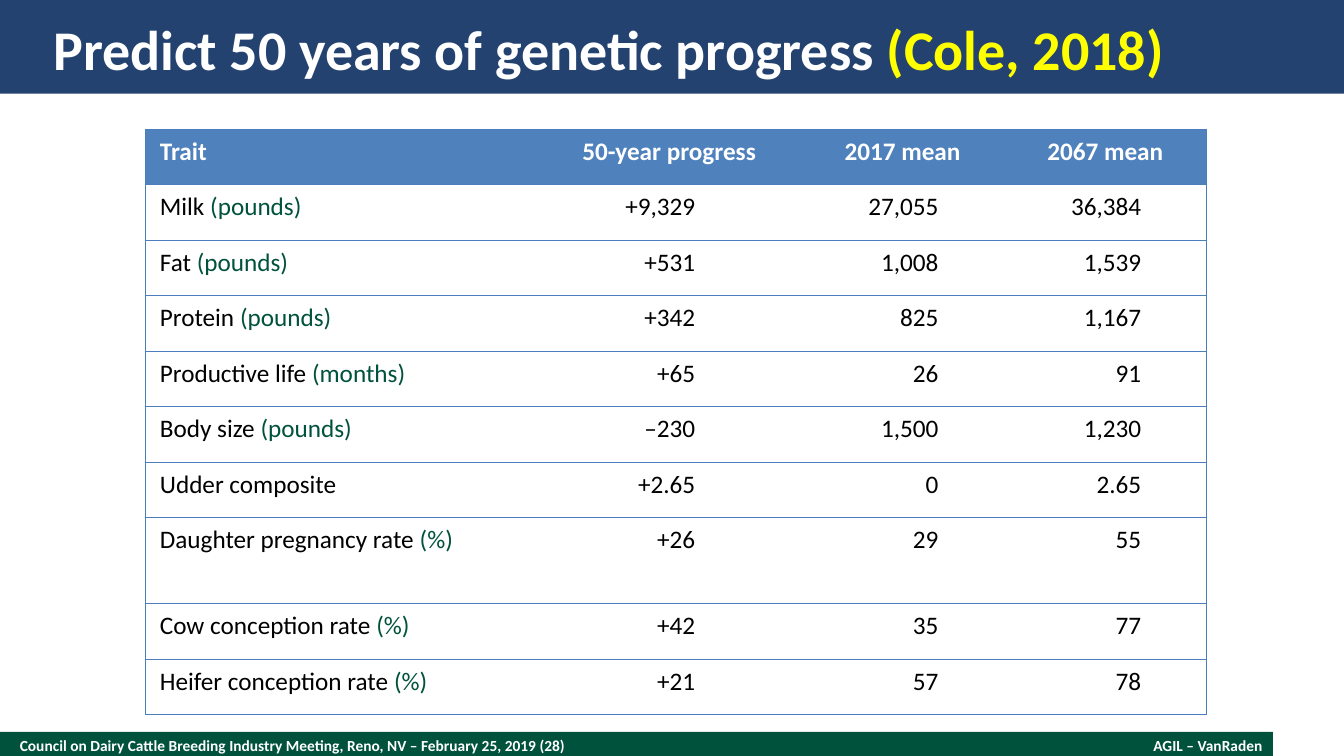
from pptx import Presentation
from pptx.dml.color import RGBColor
from pptx.enum.shapes import MSO_SHAPE
from pptx.enum.text import MSO_ANCHOR, MSO_AUTO_SIZE, PP_ALIGN
from pptx.oxml.ns import qn
from pptx.util import Cm, Pt
from lxml import etree

NAVY = RGBColor(0x24, 0x42, 0x70)
GREEN = RGBColor(0x00, 0x52, 0x3C)
HEADER_BLUE = RGBColor(0x4F, 0x81, 0xBD)
BORDER_BLUE = RGBColor(0x4B, 0x7E, 0xBC)
YELLOW = RGBColor(0xFF, 0xFF, 0x00)
WHITE = RGBColor(0xFF, 0xFF, 0xFF)
BLACK = RGBColor(0x00, 0x00, 0x00)

SLIDE_WIDTH, SLIDE_HEIGHT = 33.87, 19.05
FONT = "Calibri"

HEADINGS = ["Trait", "50-year progress", "2017 mean", "2067 mean"]
# Trait, unit, 50-year progress, 2017 mean, 2067 mean
TRAITS = [
    ("Milk", "(pounds)", "+9,329", "27,055", "36,384"),
    ("Fat", "(pounds)", "+531", "1,008", "1,539"),
    ("Protein", "(pounds)", "+342", "825", "1,167"),
    ("Productive life", "(months)", "+65", "26", "91"),
    ("Body size", "(pounds)", "–230", "1,500", "1,230"),
    ("Udder composite", "", "+2.65", "0", "2.65"),
    ("Daughter pregnancy rate", "(%)", "+26", "29", "55"),
    ("Cow conception rate", "(%)", "+42", "35", "77"),
    ("Heifer conception rate", "(%)", "+21", "57", "78"),
]
COLUMN_WIDTHS = [9.88, 6.65, 5.11, 5.11]
NUMBER_INSETS = [0.37, 2.67, 1.65, 1.65]
ROW_HEIGHT, TALL_ROW_HEIGHT, TALL_ROW = 1.4, 2.17, 7


def add_bar(slide, left, top, width, height, color):
    bar = slide.shapes.add_shape(
        MSO_SHAPE.RECTANGLE, Cm(left), Cm(top), Cm(width), Cm(height))
    bar.shadow.inherit = False
    bar.fill.solid()
    bar.fill.fore_color.rgb = color
    bar.line.fill.background()


def write_line(paragraph, parts, size, bold, align=PP_ALIGN.LEFT):
    """Fill a paragraph with (text, color) parts."""
    paragraph.alignment = align
    paragraph.font.name = FONT
    paragraph.font.size = Pt(size)
    paragraph.font.bold = bold
    for text, color in parts:
        run = paragraph.add_run()
        run.text = text
        run.font.color.rgb = color


def prepare_frame(text_frame):
    text_frame.margin_left = text_frame.margin_right = 0
    text_frame.margin_top = text_frame.margin_bottom = 0
    text_frame.vertical_anchor = MSO_ANCHOR.MIDDLE
    text_frame.auto_size = MSO_AUTO_SIZE.NONE
    text_frame.word_wrap = True
    return text_frame.paragraphs[0]


def add_title(slide, left, top, width, height):
    add_bar(slide, left, top, width, height, NAVY)
    title = slide.shapes.title
    title.left, title.top = Cm(left + 1.35), Cm(top + 0.33)
    title.width, title.height = Cm(width - 2.7), Cm(height - 0.58)
    # Bring the title in front of its bar
    title.element.getparent().append(title.element)
    write_line(prepare_frame(title.text_frame),
               [("Predict 50 years of genetic progress ", WHITE),
                ("(Cole, 2018)", YELLOW)], 40, True)


def add_footer(slide, left, top, width, height):
    add_bar(slide, left, top, width, height, GREEN)
    meeting = ("Council on Dairy Cattle Breeding Industry Meeting, "
               "Reno, NV – February 25, 2019 (28)")
    labels = [
        (meeting, left + 0.5, 22.02, PP_ALIGN.LEFT),
        ("AGIL – VanRaden", left + width - 7.7, 7.44, PP_ALIGN.RIGHT),
    ]
    for text, label_left, label_width, align in labels:
        label = slide.shapes.add_textbox(
            Cm(label_left), Cm(top), Cm(label_width), Cm(height))
        write_line(prepare_frame(label.text_frame),
                   [(text, WHITE)], 11, True, align)


def set_borders(cell, is_first, is_last):
    """Rule the top and bottom of a cell, and the outer sides of the table."""
    properties = cell._tc.get_or_add_tcPr()
    sides = {"lnL": is_first, "lnR": is_last, "lnT": True, "lnB": True}
    for side, visible in sides.items():
        line = etree.SubElement(properties, qn(f"a:{side}"), w=str(Pt(0.75)))
        if visible:
            fill = etree.SubElement(line, qn("a:solidFill"))
            etree.SubElement(fill, qn("a:srgbClr"), val=str(BORDER_BLUE))
        else:
            etree.SubElement(line, qn("a:noFill"))


def fill_cell(cell, parts, column, is_header):
    set_borders(cell, column == 0, column == len(HEADINGS) - 1)
    cell.fill.solid()
    cell.fill.fore_color.rgb = HEADER_BLUE if is_header else WHITE
    cell.margin_left = Cm(0.37)
    cell.margin_right = Cm(0.37 if is_header else NUMBER_INSETS[column])
    cell.margin_top, cell.margin_bottom = Cm(0.18), Cm(0.2)
    if column == 0:
        align = PP_ALIGN.LEFT
    else:
        align = PP_ALIGN.CENTER if is_header else PP_ALIGN.RIGHT
    write_line(cell.text_frame.paragraphs[0], parts, 18, is_header, align)


def add_trait_table(slide, left, top):
    heights = [ROW_HEIGHT] * (len(TRAITS) + 1)
    heights[TALL_ROW] = TALL_ROW_HEIGHT
    table = slide.shapes.add_table(
        len(heights), len(HEADINGS), Cm(left), Cm(top),
        Cm(sum(COLUMN_WIDTHS)), Cm(sum(heights))).table
    table.horz_banding = False
    for column, width in zip(table.columns, COLUMN_WIDTHS):
        column.width = Cm(width)
    for row, height in zip(table.rows, heights):
        row.height = Cm(height)

    # Header row
    for column, heading in enumerate(HEADINGS):
        fill_cell(table.cell(0, column), [(heading, WHITE)], column, True)

    # One row per trait
    for row, (trait, unit, *numbers) in enumerate(TRAITS, start=1):
        name = [(f"{trait} ", BLACK), (unit, GREEN)] if unit else [(trait, BLACK)]
        cells = [name] + [[(number, BLACK)] for number in numbers]
        for column, parts in enumerate(cells):
            fill_cell(table.cell(row, column), parts, column, False)


def main():
    presentation = Presentation()
    presentation.slide_width = Cm(SLIDE_WIDTH)
    presentation.slide_height = Cm(SLIDE_HEIGHT)
    slide = presentation.slides.add_slide(presentation.slide_layouts[5])
    add_footer(slide, 0, 18.44, 32.08, 0.69)
    add_title(slide, 0, 0, SLIDE_WIDTH, 2.36)
    add_trait_table(slide, 3.66, 3.25)
    presentation.save("out.pptx")


if __name__ == "__main__":
    main()
